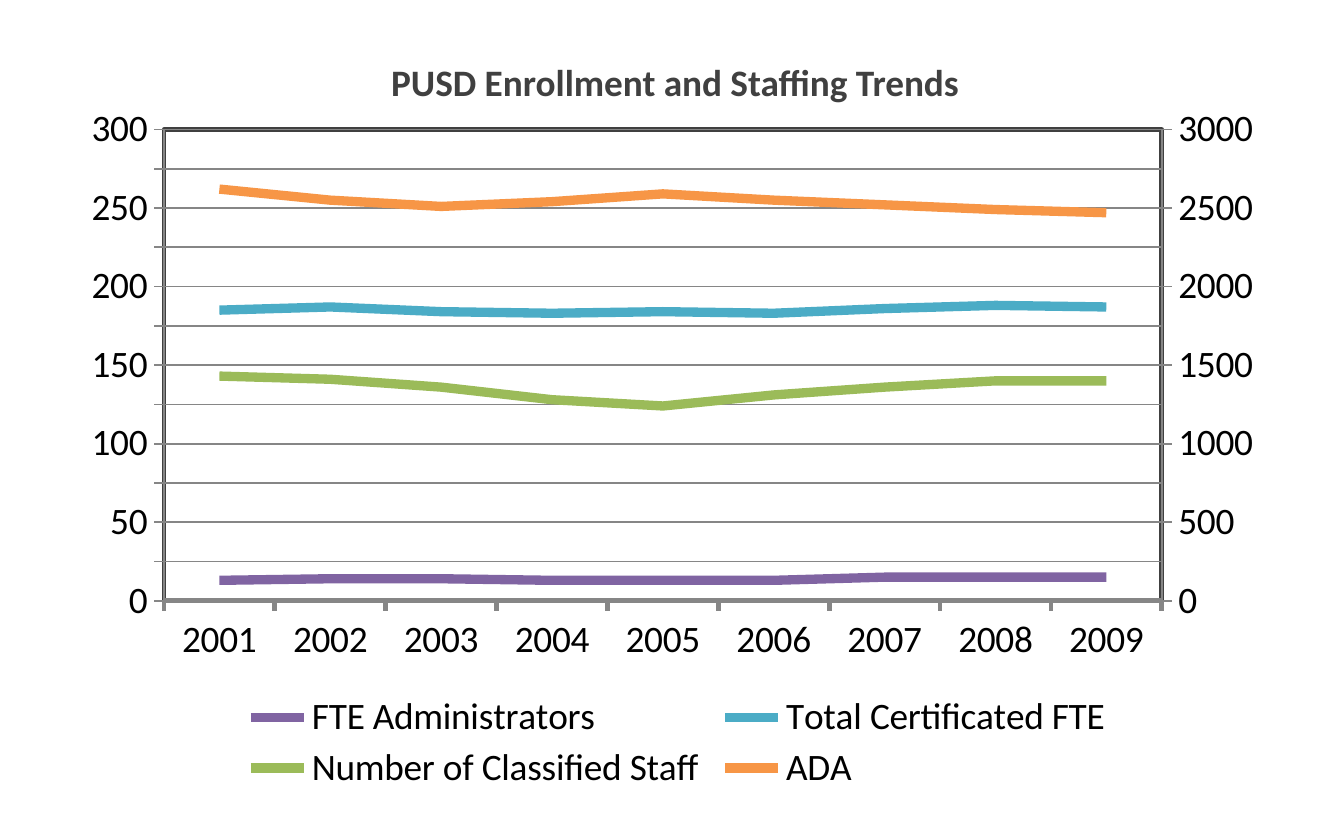
from copy import deepcopy
from dataclasses import dataclass

from lxml import etree
from pptx import Presentation
from pptx import util as u
from pptx.chart import data as chart_data
from pptx.dml import color
from pptx.enum import chart as charts, text
from pptx.oxml import ns, parse_xml

COLORS = {
    "title": "404040", "text": "000000", "axis": "868686", "frame": "404040",
    "purple": "8064A2", "teal": "4BACC6", "green": "9BBB59", "orange": "F79646",
}
YEARS = [str(year) for year in range(2001, 2010)]


@dataclass(frozen=True)
class Trend:
    name: str
    hue: str
    values: tuple[int, ...]


TRENDS = (
    Trend("FTE Administrators", "purple", (13, 14, 14, 13, 13, 13, 15, 15, 15)),
    Trend("Total Certificated FTE", "teal", (185, 187, 184, 183, 184, 183, 186, 188, 187)),
    Trend("Number of Classified Staff", "green", (143, 141, 136, 128, 124, 131, 136, 140, 140)),
    Trend("ADA", "orange", (2620, 2550, 2510, 2540, 2590, 2550, 2520, 2490, 2470)),
)


def rgb(name: str) -> color.RGBColor:
    return color.RGBColor.from_string(COLORS[name])


def apply(target: object, formats: dict) -> None:
    for name, value in formats.items():
        setattr(target, name, value)


def style_font(font, size: int, hue: str, bold: bool) -> None:
    apply(font, {"name": "Calibri", "size": u.Pt(size), "bold": bold})
    font.color.rgb = rgb(hue)


def style_line(line, hue: str, width: float) -> None:
    line.color.rgb = rgb(hue)
    line.width = u.Pt(width)


def set_val(parent, tag: str, value: str) -> None:
    parent.find(".//" + ns.qn(tag)).set("val", value)


def manual_layout(x: float, y: float, w: float, h: float, inner: bool = False):
    target = '<c:layoutTarget val="inner"/>' if inner else ""
    sizes = "".join(f'<c:{tag} val="{size}"/>' for tag, size in zip("xywh", (x, y, w, h)))
    return parse_xml(
        f'<c:layout {ns.nsdecls("c")}><c:manualLayout>{target}'
        f'<c:xMode val="edge"/><c:yMode val="edge"/>{sizes}</c:manualLayout></c:layout>')


def add_right_axis(plot_area) -> None:
    """Move the last series to a second line group with its own right axis."""
    left_group, left_cat, left_val = (
        plot_area.find(ns.qn(tag)) for tag in ("c:lineChart", "c:catAx", "c:valAx"))
    between = left_val.find(ns.qn("c:crossBetween"))
    if between is None:
        between = etree.Element(ns.qn("c:crossBetween"))
        left_val.find(ns.qn("c:crosses")).addnext(between)
    between.set("val", "between")

    right_group, right_cat, right_val = map(deepcopy, (left_group, left_cat, left_val))
    left_group.remove(left_group.findall(ns.qn("c:ser"))[-1])
    for series in right_group.findall(ns.qn("c:ser"))[:-1]:
        right_group.remove(series)
    left_group.addnext(right_group)
    left_val.addnext(right_val)
    right_val.addnext(right_cat)

    cat_id, val_id = "5001", "5002"
    for axis_id, value in zip(right_group.findall(ns.qn("c:axId")), (cat_id, val_id)):
        axis_id.set("val", value)
    for axis, own, other in ((right_cat, cat_id, val_id), (right_val, val_id, cat_id)):
        set_val(axis, "c:axId", own)
        set_val(axis, "c:crossAx", other)
    set_val(right_cat, "c:delete", "1")
    right_val.remove(right_val.find(ns.qn("c:majorGridlines")))
    for tag, value in {"c:max": "3000", "c:majorUnit": "500",
                       "c:axPos": "r", "c:crosses": "max"}.items():
        set_val(right_val, tag, value)
    right_val.find(ns.qn("c:numFmt")).set("formatCode", "General")


def add_title(slide) -> None:
    box = slide.shapes.add_textbox(*map(u.Inches, (0.42, 0.25, 7.2, 0.47)))
    frame = box.text_frame
    apply(frame, {
        "word_wrap": True, "vertical_anchor": text.MSO_ANCHOR.MIDDLE,
        "margin_left": u.Inches(0.07), "margin_right": u.Inches(0.07),
        "margin_top": u.Inches(0.04), "margin_bottom": u.Inches(0.04),
    })
    heading = frame.paragraphs[0]
    heading.alignment = text.PP_ALIGN.CENTER
    run = heading.add_run()
    run.text = "PUSD Enrollment and Staffing Trends"
    style_font(run.font, 16, "title", True)


def add_trends_chart(slide) -> None:
    trend_data = chart_data.CategoryChartData()
    trend_data.categories = YEARS
    for trend in TRENDS:
        trend_data.add_series(trend.name, trend.values)
    chart = slide.shapes.add_chart(
        charts.XL_CHART_TYPE.LINE, *map(u.Inches, (0.4, 0.56, 7.2, 4.22)), trend_data).chart
    apply(chart, {"has_title": False, "has_legend": True})
    style_font(chart.font, 16, "text", False)

    # Trend lines
    plot = chart.plots[0]
    plot.vary_by_categories = False
    for series, trend in zip(plot.series, TRENDS):
        series.smooth = False
        style_line(series.format.line, trend.hue, 4)

    # Year axis and staffing axis
    years, staffing = chart.category_axis, chart.value_axis
    for axis, width in ((years, 2), (staffing, 0.75)):
        apply(axis, {"major_tick_mark": charts.XL_TICK_MARK.OUTSIDE,
                     "minor_tick_mark": charts.XL_TICK_MARK.NONE})
        style_line(axis.format.line, "axis", width)
    apply(staffing, {"minimum_scale": 0, "maximum_scale": 300, "major_unit": 25,
                     "has_major_gridlines": True})
    apply(staffing.tick_labels, {"number_format": "#,##0", "number_format_is_linked": False})
    style_line(staffing.major_gridlines.format.line, "axis", 0.75)

    # Legend
    apply(chart.legend, {"position": charts.XL_LEGEND_POSITION.BOTTOM,
                         "include_in_layout": False})
    legend = chart.element.find(".//" + ns.qn("c:legend"))
    for layout in legend.findall(ns.qn("c:layout")):
        legend.remove(layout)
    legend.find(ns.qn("c:legendPos")).addnext(manual_layout(0.14, 0.84, 0.73, 0.15))

    # Enrollment axis on the right, plot position and frame
    plot_area = chart.element.find(".//" + ns.qn("c:plotArea"))
    add_right_axis(plot_area)
    for layout in plot_area.findall(ns.qn("c:layout")):
        plot_area.remove(layout)
    plot_area.insert(0, manual_layout(0.08, 0.05, 0.825, 0.665, inner=True))
    plot_area.append(parse_xml(
        f'<c:spPr {ns.nsdecls("c", "a")}><a:noFill/><a:ln w="{u.Pt(2)}"><a:solidFill>'
        f'<a:srgbClr val="{COLORS["frame"]}"/></a:solidFill></a:ln></c:spPr>'))


def main() -> None:
    deck = Presentation()
    apply(deck, {"slide_width": u.Inches(8), "slide_height": u.Inches(5)})
    slide = deck.slides.add_slide(deck.slide_layouts[6])
    add_title(slide)
    add_trends_chart(slide)
    deck.save("out.pptx")


if __name__ == "__main__":
    main()
